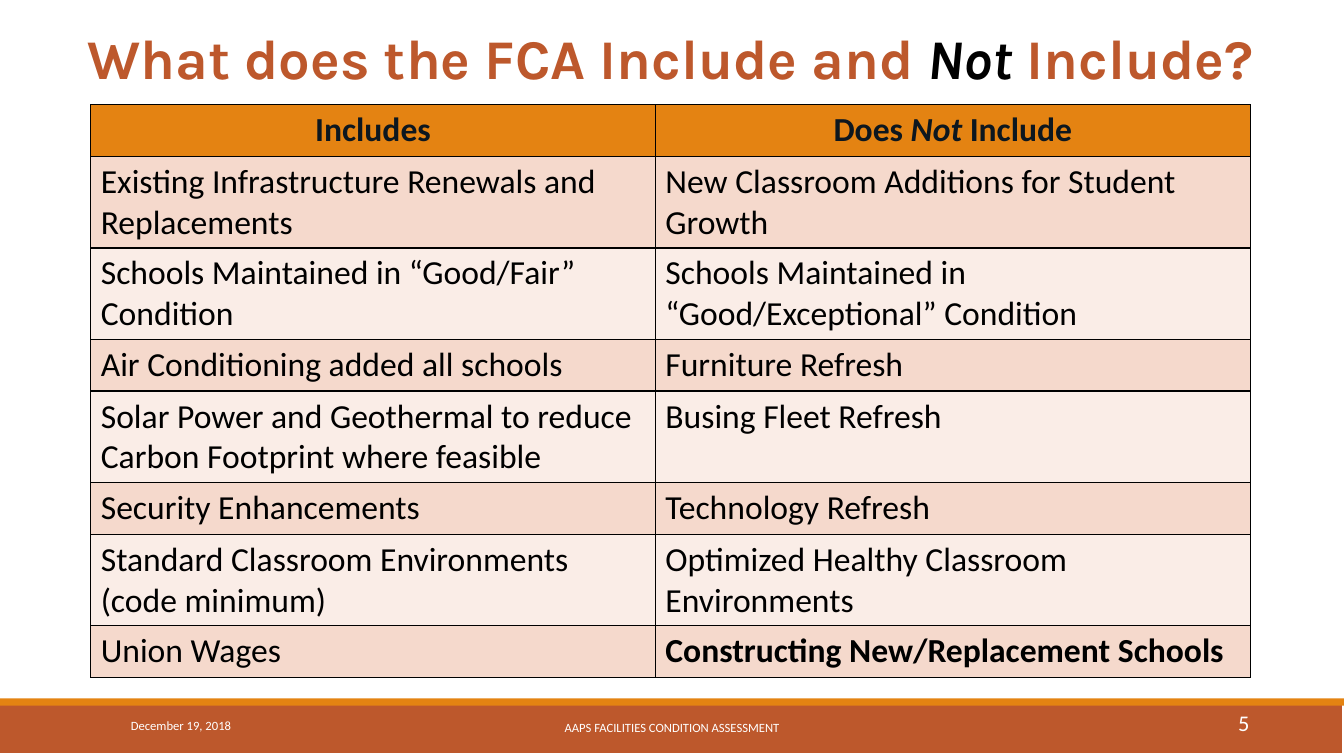
from dataclasses import dataclass

from lxml.etree import SubElement
from pptx import Presentation
from pptx.dml.color import RGBColor
from pptx.enum.shapes import MSO_SHAPE
from pptx.enum.text import MSO_ANCHOR, MSO_AUTO_SIZE, PP_ALIGN
from pptx.oxml.ns import qn
from pptx.util import Inches, Pt

RUST, AMBER, WHITE, BLACK, INK = "BD582C", "E48312", "FFFFFF", "000000", "0D171F"
STRIPES = ("F5D9CC", "FAEDE7")
LEFT, MID, RIGHT = PP_ALIGN.LEFT, PP_ALIGN.CENTER, PP_ALIGN.RIGHT


@dataclass
class Band:
    """A coloured bar along the foot of the slide."""
    box: tuple
    fill: str


@dataclass
class Note:
    """A short text in the footer."""
    text: str
    box: tuple
    size: int
    align: PP_ALIGN


BANDS = [
    Band((-0.02, 6.97, 13.33, 0.5), RUST),
    Band((0, 6.93, 13.33, 0.07), AMBER),
]
NOTES = [
    Note("December 19, 2018", (1.2, 7, 2.7, 0.4), 9, LEFT),
    Note("AAPS FACILITIES CONDITION ASSESSMENT", (4.03, 7.02, 5.27, 0.4), 9, MID),
    Note("5", (11.06, 6.97, 1.43, 0.4), 16, RIGHT),
]
HEADS = ("Includes", "Does *Not* Include")
ROWS = [
    ("Existing Infrastructure Renewals and Replacements",
     "New Classroom Additions for Student Growth"),
    ("Schools Maintained in “Good/Fair” Condition",
     "Schools Maintained in “Good/Exceptional” Condition"),
    ("Air Conditioning added all schools", "Furniture Refresh"),
    ("Solar Power and Geothermal to reduce Carbon Footprint where feasible",
     "Busing Fleet Refresh"),
    ("Security Enhancements", "Technology Refresh"),
    ("Standard Classroom Environments\n(code minimum)",
     "Optimized Healthy Classroom Environments"),
    ("Union Wages", "Constructing New/Replacement Schools"),
]
STRONG = "Constructing New/Replacement Schools"
WIDTHS = (5.6, 5.9)
ONE, TWO = 0.51, 0.91
HEIGHTS = (ONE, TWO, TWO, ONE, TWO, ONE, TWO, ONE)


def color(code: str) -> RGBColor:
    """Turn a hex string into a colour."""
    return RGBColor.from_string(code)


def inches(box: tuple) -> list:
    """Turn a box in inches into lengths."""
    return [Inches(n) for n in box]


def write(frame, text: str, face: str, size: int, ink: str,
          bold: bool = False, align: PP_ALIGN = LEFT, accent: str = "") -> None:
    """Write text in a frame, with the parts between stars in italics."""
    frame.text = text.replace("*", "") if "*" not in text else ""
    if "*" in text:
        for part in text.split("*"):
            frame.paragraphs[0].add_run().text = part
    for para in frame.paragraphs:
        para.alignment = align
        for i, run in enumerate(para.runs):
            font = run.font
            font.name, font.size, font.bold = face, Pt(size), bold
            font.italic = i % 2 == 1
            font.color.rgb = color(accent if accent and i % 2 else ink)


def add_title(slide) -> None:
    """Place and fill the title."""
    title = slide.shapes.title
    title.left, title.top, title.width, title.height = inches((0.15, 0.22, 13, 0.8))
    frame = title.text_frame
    frame.word_wrap, frame.auto_size = True, MSO_AUTO_SIZE.NONE
    frame.vertical_anchor = MSO_ANCHOR.MIDDLE
    write(frame, "What does the FCA Include and *Not* Include?",
          "Karla", 40, RUST, True, MID, BLACK)
    frame.paragraphs[0].line_spacing = 0.85


def add_band(slide, band: Band) -> None:
    """Draw one bar."""
    bar = slide.shapes.add_shape(MSO_SHAPE.RECTANGLE, *inches(band.box))
    bar.shadow.inherit = False
    bar.fill.solid()
    bar.fill.fore_color.rgb = color(band.fill)
    bar.line.fill.background()


def add_note(slide, note: Note) -> None:
    """Draw one footer text."""
    frame = slide.shapes.add_textbox(*inches(note.box)).text_frame
    frame.word_wrap = True
    frame.vertical_anchor = MSO_ANCHOR.MIDDLE
    write(frame, note.text, "Calibri", note.size, WHITE, align=note.align)


def edge(cell) -> None:
    """Give a cell a thin black border on each side."""
    props = cell._tc.get_or_add_tcPr()
    for side in ("a:lnL", "a:lnR", "a:lnT", "a:lnB"):
        line = SubElement(props, qn(side), w=str(Pt(1)))
        fill = SubElement(line, qn("a:solidFill"))
        SubElement(fill, qn("a:srgbClr"), val=BLACK)


def add_grid(slide) -> None:
    """Draw the table of what is in and out."""
    box = (0.9, 1.04, sum(WIDTHS), sum(HEIGHTS))
    grid = slide.shapes.add_table(len(HEIGHTS), len(WIDTHS), *inches(box)).table
    for col, width in zip(grid.columns, WIDTHS):
        col.width = Inches(width)
    for row, height in zip(grid.rows, HEIGHTS):
        row.height = Inches(height)
    for r, texts in enumerate([HEADS, *ROWS]):
        head = r == 0
        for c, text in enumerate(texts):
            cell = grid.cell(r, c)
            edge(cell)
            cell.fill.solid()
            cell.fill.fore_color.rgb = color(AMBER if head else STRIPES[(r - 1) % 2])
            write(cell.text_frame, text, "Calibri", 24, INK if head else BLACK,
                  head or text == STRONG, MID if head else LEFT)


def main() -> None:
    """Build the slide and save it."""
    deck = Presentation()
    deck.slide_width, deck.slide_height = Inches(13.33), Inches(7.5)
    slide = deck.slides.add_slide(deck.slide_layouts[5])
    for band in BANDS:
        add_band(slide, band)
    add_title(slide)
    for note in NOTES:
        add_note(slide, note)
    add_grid(slide)
    deck.save("out.pptx")


if __name__ == "__main__":
    main()
